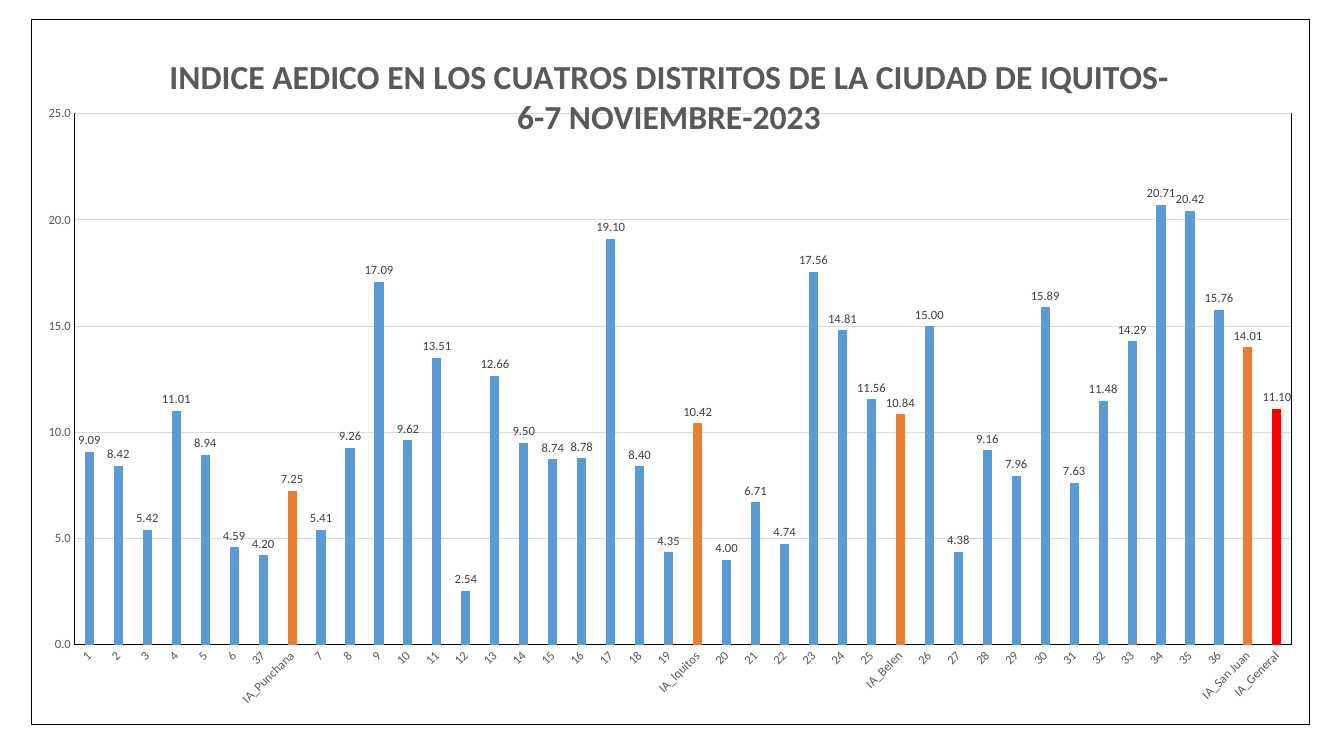
import pptx
import pptx.chart.data
import pptx.dml.color
import pptx.enum.chart
import pptx.oxml
import pptx.oxml.ns
import pptx.util

# Content: one group per district, closed by the district's own index
TITLE = "INDICE AEDICO EN LOS CUATROS DISTRITOS DE LA CIUDAD DE IQUITOS- 6-7 NOVIEMBRE-2023"
DISTRICTS = [
    ("IA_Punchana", 7.25, {
        "1": 9.09, "2": 8.42, "3": 5.42, "4": 11.01, "5": 8.94, "6": 4.59, "37": 4.2}),
    ("IA_Iquitos", 10.42, {
        "7": 5.41, "8": 9.26, "9": 17.09, "10": 9.62, "11": 13.51, "12": 2.54, "13": 12.66,
        "14": 9.5, "15": 8.74, "16": 8.78, "17": 19.1, "18": 8.4, "19": 4.35}),
    ("IA_Belen", 10.84, {
        "20": 4, "21": 6.71, "22": 4.74, "23": 17.56, "24": 14.81, "25": 11.56}),
    ("IA_San Juan", 14.01, {
        "26": 15, "27": 4.38, "28": 9.16, "29": 7.96, "30": 15.89, "31": 7.63,
        "32": 11.48, "33": 14.29, "34": 20.71, "35": 20.42, "36": 15.76}),
]
GENERAL = ("IA_General", 11.1)

THEME = {
    "font": "Calibri",
    "sector": "5B9BD5", "district": "ED7D31", "general": "FF0000",
    "text": "595959", "label": "404040", "grid": "D9D9D9", "frame": "000000",
    "title_size": 24, "base_size": 10, "small_size": 9, "line": 0.75,
}

# Geometry in px
EMU_PER_PX = 914400 / 100.8
SLIDE = (1344, 756)
CHART_BOX = (31, 19, 1279, 706)
TITLE_AT = (132, 28)
PLOT_BOX = (17, 87, 1244, 601)


def px(length):
    return pptx.util.Emu(round(length * EMU_PER_PX))


def rgb(name):
    return pptx.dml.color.RGBColor.from_string(THEME[name])


def style_font(font, size, color, bold=False):
    font.name = THEME["font"]
    font.size = pptx.util.Pt(THEME[size])
    font.color.rgb = rgb(color)
    font.bold = bold


def style_line(line, color):
    line.color.rgb = rgb(color)
    line.width = pptx.util.Pt(THEME["line"])


def chart_xml(tag, body):
    return pptx.oxml.parse_xml(
        f'<c:{tag} {pptx.oxml.ns.nsdecls("c", "a")}>{body}</c:{tag}>')


def manual_layout(target, *box):
    """Layout element for x, y and, if given, width and height within the chart."""
    parts = list(zip("xywh", box, CHART_BOX[2:] * 2))
    modes = "".join(f'<c:{key}Mode val="edge"/>' for key, _, _ in parts[:2])
    sizes = "".join(f'<c:{key} val="{length / whole:.4f}"/>' for key, length, whole in parts)
    return chart_xml("layout", f"<c:manualLayout>{target}{modes}{sizes}</c:manualLayout>")


def frame(fill):
    width = pptx.util.Pt(THEME["line"])
    return chart_xml("spPr", f'{fill}<a:ln w="{width}"><a:solidFill>'
                             f'<a:srgbClr val="{THEME["frame"]}"/></a:solidFill></a:ln>')


def replace_layout(parent, layout, index):
    for old in parent.findall(pptx.oxml.ns.qn("c:layout")):
        parent.remove(old)
    parent.insert(index, layout)


def main():
    deck = pptx.Presentation()
    deck.slide_width, deck.slide_height = map(px, SLIDE)
    slide = deck.slides.add_slide(deck.slide_layouts[6])

    # Bars in reading order, each with its colour role
    bars = []
    for district, index, sectors in DISTRICTS:
        bars += [(sector, value, "sector") for sector, value in sectors.items()]
        bars.append((district, index, "district"))
    bars.append((*GENERAL, "general"))

    data = pptx.chart.data.CategoryChartData()
    data.categories = [name for name, _, _ in bars]
    data.add_series("Series 1", [value for _, value, _ in bars])
    chart = slide.shapes.add_chart(
        pptx.enum.chart.XL_CHART_TYPE.COLUMN_CLUSTERED, *map(px, CHART_BOX), data).chart
    chart.has_legend = False
    style_font(chart.font, "base_size", "frame")

    # Title
    chart.has_title = True
    heading = chart.chart_title.text_frame.paragraphs[0].add_run()
    heading.text = TITLE
    style_font(heading.font, "title_size", "text", bold=True)
    chart.chart_title.include_in_layout = True
    title_xml = chart._chartSpace.chart.find(pptx.oxml.ns.qn("c:title"))
    replace_layout(title_xml, manual_layout("", *TITLE_AT), 1)

    # Axes
    sectors_axis, index_axis = chart.category_axis, chart.value_axis
    for axis in (sectors_axis, index_axis):
        axis.major_tick_mark = axis.minor_tick_mark = pptx.enum.chart.XL_TICK_MARK.NONE
        style_font(axis.tick_labels.font, "small_size", "text")
        style_line(axis.format.line, "frame")
    label_body = sectors_axis._element.find(
        f'{pptx.oxml.ns.qn("c:txPr")}/{pptx.oxml.ns.qn("a:bodyPr")}')
    label_body.set("rot", "-2700000")
    index_axis.minimum_scale, index_axis.maximum_scale, index_axis.major_unit = 0, 25, 5
    index_axis.tick_labels.number_format = "0.0"
    index_axis.tick_labels.number_format_is_linked = False
    index_axis.has_major_gridlines = True
    style_line(index_axis.major_gridlines.format.line, "grid")

    # Bars and value labels
    plot = chart.plots[0]
    plot.gap_width, plot.overlap, plot.vary_by_categories = 219, -27, False
    series = plot.series[0]
    series.format.fill.solid()
    series.format.fill.fore_color.rgb = rgb("sector")
    for position, (_, _, role) in enumerate(bars):
        if role != "sector":
            fill = series.points[position].format.fill
            fill.solid()
            fill.fore_color.rgb = rgb(role)
    labels = series.data_labels
    labels.show_value = True
    labels.number_format = "#,##0.00"
    labels.number_format_is_linked = False
    labels.position = pptx.enum.chart.XL_LABEL_POSITION.OUTSIDE_END
    style_font(labels.font, "small_size", "label")

    # Plot area and the two frames
    plot_area = chart._chartSpace.chart.plotArea
    outer = '<c:layoutTarget val="outer"/>'
    replace_layout(plot_area, manual_layout(outer, *PLOT_BOX), 0)
    plot_area.append(frame("<a:noFill/>"))
    chart._chartSpace.chart.addnext(
        frame('<a:solidFill><a:srgbClr val="FFFFFF"/></a:solidFill>'))

    deck.save("out.pptx")


if __name__ == "__main__":
    main()
